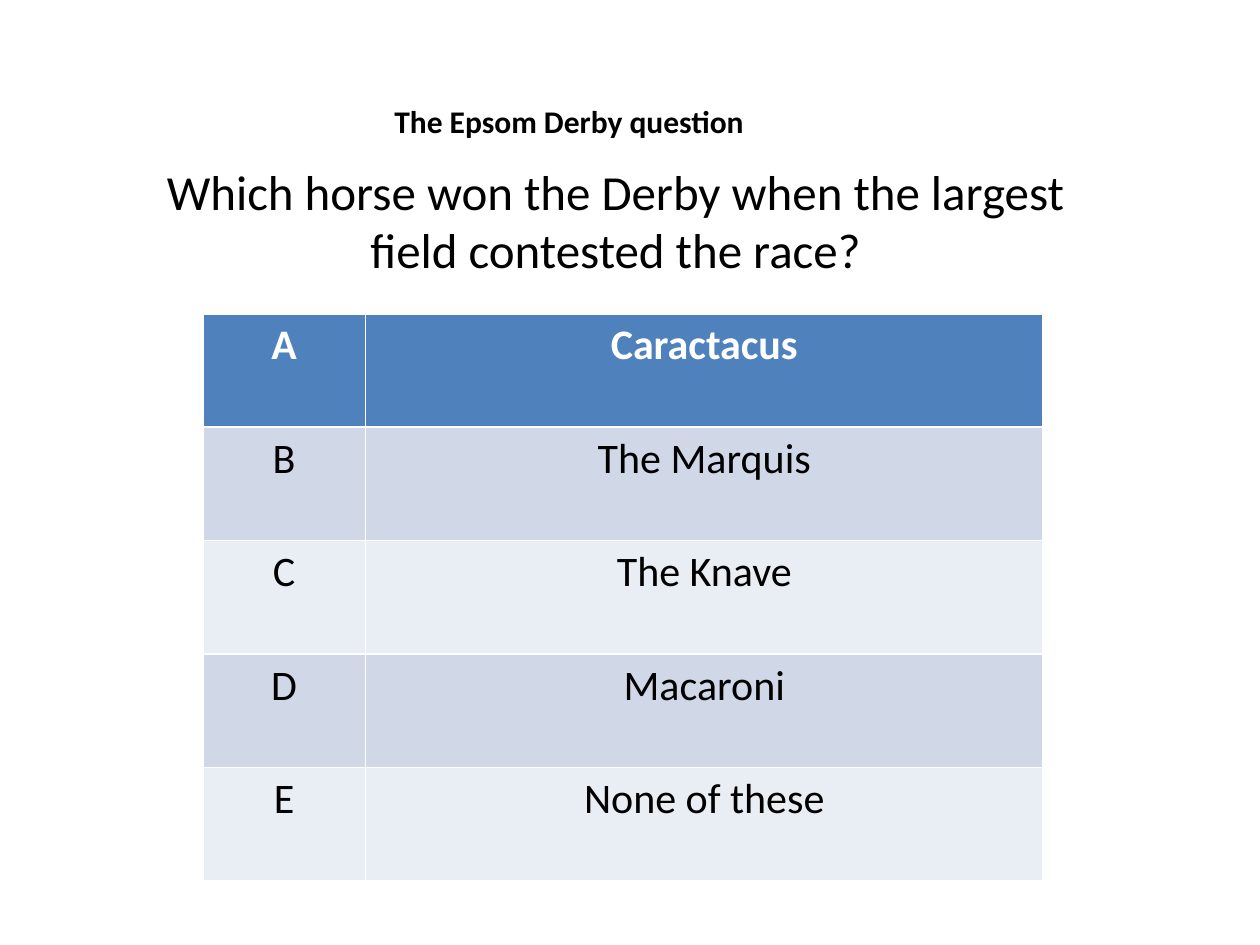
import dataclasses

import pptx
import pptx.dml.color
import pptx.enum.text
import pptx.util

Inches = pptx.util.Inches
ALIGN = pptx.enum.text.PP_ALIGN
FONT = "Calibri"
COLORS = {
    "header": "4F81BD",
    "band_dark": "D0D8E8",
    "band_light": "E9EDF4",
    "white": "FFFFFF",
    "black": "000000",
}


@dataclasses.dataclass
class Answer:
    letter: str
    horse: str


ANSWERS = [
    Answer("A", "Caractacus"),
    Answer("B", "The Marquis"),
    Answer("C", "The Knave"),
    Answer("D", "Macaroni"),
    Answer("E", "None of these"),
]


def rgb(name: str) -> pptx.dml.color.RGBColor:
    return pptx.dml.color.RGBColor.from_string(COLORS[name])


def write(tf, text: str, size: int, color: str = "black",
          bold: bool = False, align=ALIGN.CENTER) -> None:
    p = tf.paragraphs[0]
    p.text = text
    p.alignment = align
    p.font.name = FONT
    p.font.size = pptx.util.Pt(size)
    p.font.bold = bold
    p.font.color.rgb = rgb(color)


def place(sp, left: float, top: float, width: float, height: float) -> None:
    sp.left, sp.top = Inches(left), Inches(top)
    sp.width, sp.height = Inches(width), Inches(height)


def add_answers(slide, answers: list[Answer]) -> None:
    table = slide.shapes.add_table(
        len(answers), 2, Inches(1.61), Inches(2.49), Inches(6.67), Inches(4.5)
    ).table
    for column, width in zip(table.columns, (1.29, 5.38)):
        column.width = Inches(width)
    for i, answer in enumerate(answers):
        header = i == 0
        fill = "header" if header else ("band_light", "band_dark")[i % 2]
        for j, text in enumerate((answer.letter, answer.horse)):
            cell = table.cell(i, j)
            cell.fill.solid()
            cell.fill.fore_color.rgb = rgb(fill)
            write(cell.text_frame, text, 24, "white" if header else "black", header)


def main() -> None:
    prs = pptx.Presentation()
    prs.slide_width, prs.slide_height = Inches(10), Inches(7.5)
    slide = prs.slides.add_slide(prs.slide_layouts[5])

    add_answers(slide, ANSWERS)

    question = slide.shapes.add_textbox(0, 0, 0, 0)
    place(question, 0.91, 1.23, 7.95, 1.04)
    question.text_frame.word_wrap = True
    write(question.text_frame,
          "Which horse won the Derby when the largest field contested the race?", 28)

    title = slide.shapes.title
    place(title, 3.03, 0.76, 3, 0.4)
    tf = title.text_frame
    tf.word_wrap = False
    tf.auto_size = pptx.enum.text.MSO_AUTO_SIZE.SHAPE_TO_FIT_TEXT
    tf.vertical_anchor = pptx.enum.text.MSO_ANCHOR.TOP
    write(tf, "The Epsom Derby question", 18, bold=True, align=ALIGN.LEFT)

    prs.save("out.pptx")


if __name__ == "__main__":
    main()
